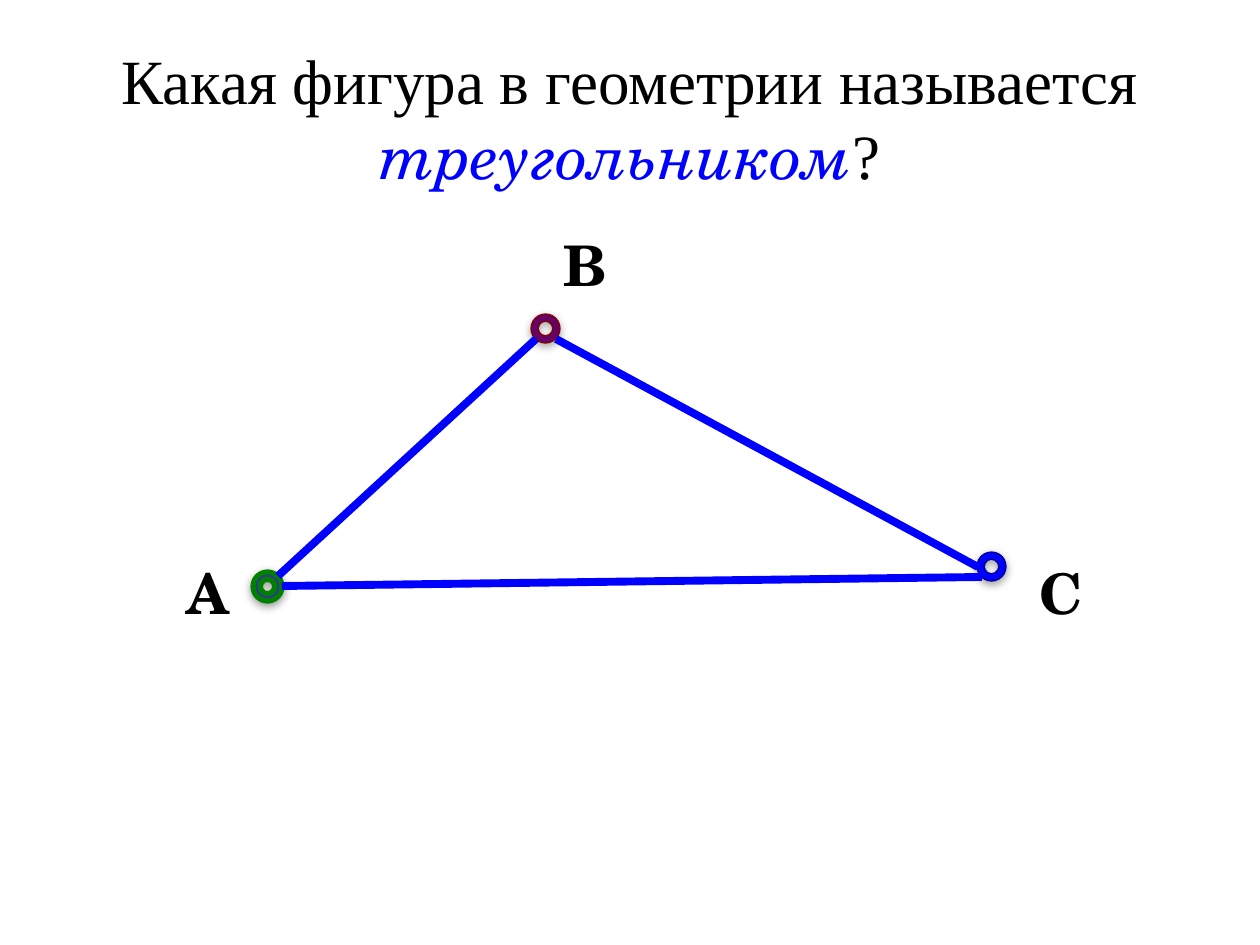
import pptx
import pptx.dml.color
import pptx.enum.shapes
import pptx.enum.text
import pptx.oxml.ns
import pptx.util
from lxml import etree

RGB = pptx.dml.color.RGBColor
BLACK = RGB(0, 0, 0)
BLUE = RGB(0, 0, 0xFF)
NAVY = RGB(0, 0, 0x90)
INDIGO = RGB(0x33, 0x33, 0x99)
GREEN = RGB(0, 0x80, 0)
PURPLE = RGB(0x66, 0, 0x66)
MAROON = RGB(0x80, 0, 0)
SERIF = "Times New Roman"
SCHOOL = "TeX Gyre Schola"
SCALE = 914400 / 126
RING = 29


def emu(px):
    return pptx.util.Emu(round(px * SCALE))


def add_sub(parent, tag, **attrs):
    """Append a DrawingML element with the given attributes."""
    node = etree.SubElement(parent, pptx.oxml.ns.qn(tag))
    for name, value in attrs.items():
        node.set(name, str(value))
    return node


def add_run(para, text, size=36, face=SERIF, color=BLACK, bold=False, italic=False):
    run = para.add_run()
    run.text = text
    font = run.font
    font.size = pptx.util.Pt(size)
    font.name = face
    font.color.rgb = color
    font.bold = bold
    font.italic = italic


class Board:
    def __init__(self, deck):
        self.slide = deck.slides.add_slide(deck.slide_layouts[5])
        self.shapes = self.slide.shapes

    def title(self, left, top, width, height, runs):
        box = self.shapes.title
        box.left, box.top = emu(left), emu(top)
        box.width, box.height = emu(width), emu(height)
        frame = box.text_frame
        frame.word_wrap = True
        frame.vertical_anchor = pptx.enum.text.MSO_ANCHOR.MIDDLE
        para = frame.paragraphs[0]
        para.alignment = pptx.enum.text.PP_ALIGN.CENTER
        for text, style in runs:
            add_run(para, text, **style)

    def ring(self, left, top, fill, edge, weight, alpha, drop):
        """Draw a vertex ring; alpha is in percent, drop in points."""
        ring = self.shapes.add_shape(
            pptx.enum.shapes.MSO_SHAPE.DONUT,
            emu(left), emu(top), emu(RING), emu(RING))
        ring.adjustments[0] = 0.25
        ring.fill.solid()
        ring.fill.fore_color.rgb = fill
        ring.line.color.rgb = edge
        ring.line.width = pptx.util.Pt(weight)
        ring.shadow.inherit = False
        effects = ring._element.spPr.find(pptx.oxml.ns.qn("a:effectLst"))
        shade = add_sub(effects, "a:outerShdw", blurRad=pptx.util.Pt(5),
                        dist=pptx.util.Pt(drop), dir=90 * 60000, rotWithShape=0)
        tint = add_sub(shade, "a:srgbClr", val=BLACK)
        add_sub(tint, "a:alpha", val=alpha * 1000)

    def label(self, left, top, width, text):
        box = self.shapes.add_textbox(emu(left), emu(top), emu(width), emu(81))
        box.text_frame.word_wrap = True
        add_run(box.text_frame.paragraphs[0], text, size=32, face=SCHOOL, bold=True)

    def side(self, *ends):
        line = self.shapes.add_connector(
            pptx.enum.shapes.MSO_CONNECTOR.STRAIGHT, *map(emu, ends))
        line.line.color.rgb = BLUE
        line.line.width = pptx.util.Pt(4.5)
        add_sub(line._element.spPr, "a:effectLst")


def main():
    deck = pptx.Presentation()
    deck.slide_width, deck.slide_height = emu(1260), emu(945)
    board = Board(deck)
    board.title(63, 38, 1134, 158, [
        ("Какая фигура в геометрии называется ", {}),
        ("треугольником", {"face": SCHOOL, "color": BLUE, "italic": True}),
        ("?", {}),
    ])
    board.ring(253, 572, INDIGO, GREEN, 3, 38, 1.6)
    board.ring(531, 314, PURPLE, MAROON, 0.75, 35, 1.8)
    board.ring(977, 552, BLUE, NAVY, 0.75, 38, 1.6)
    board.label(174, 552, 72, "А")
    board.label(551, 224, 68, "В")
    board.label(1027, 552, 67, "С")
    board.side(278, 576, 536, 339)
    board.side(556, 339, 978, 567)
    board.side(282, 586, 982, 577)
    deck.save("out.pptx")


if __name__ == "__main__":
    main()
